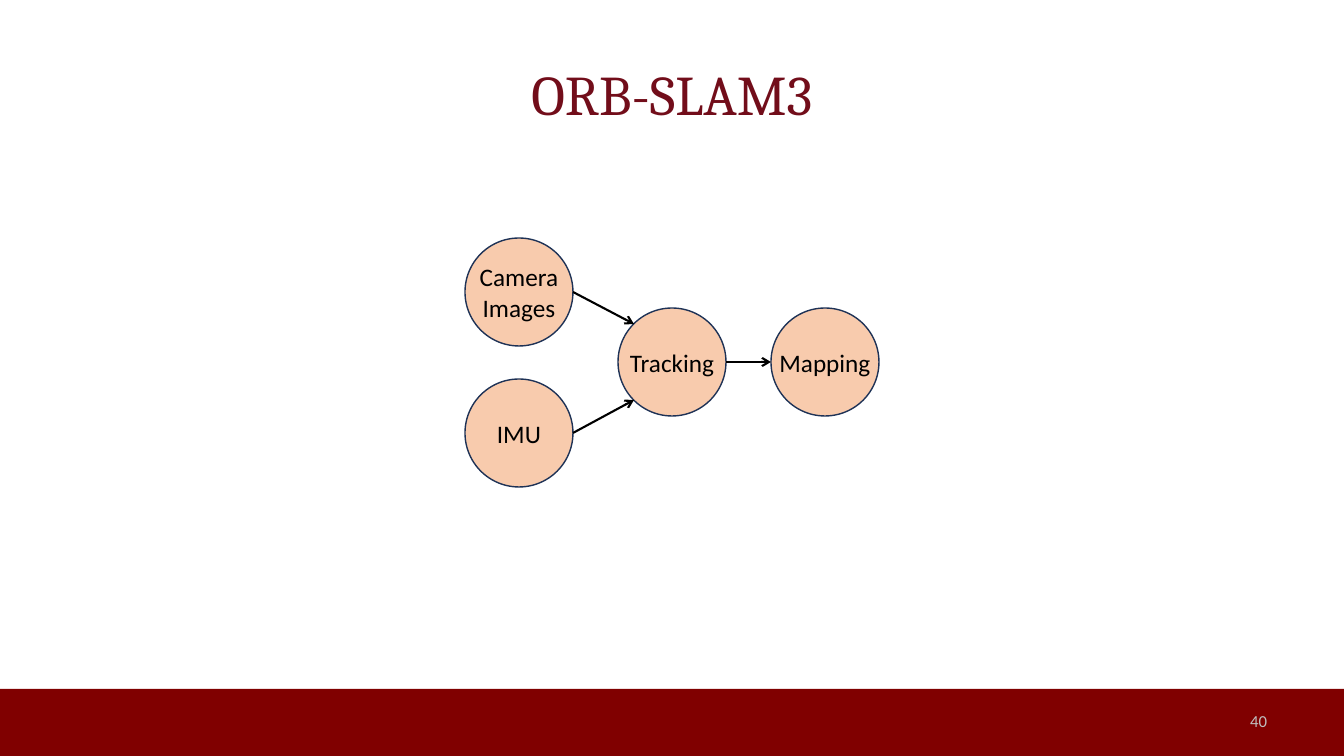
from math import cos, pi, sin

from lxml.etree import SubElement
from pptx import Presentation
from pptx.dml.color import RGBColor
from pptx.enum.shapes import MSO_CONNECTOR, MSO_SHAPE
from pptx.enum.text import MSO_ANCHOR, PP_ALIGN
from pptx.oxml.ns import qn
from pptx.util import Pt

EMU_PER_PX = 914400 / 100.8
MAROON = RGBColor(0x80, 0x00, 0x00)
WINE = RGBColor(0x72, 0x0D, 0x1A)
SILVER = RGBColor(0xBF, 0xBF, 0xBF)
PEACH = RGBColor(0xF8, 0xCB, 0xAD)
NAVY = RGBColor(0x1E, 0x32, 0x56)
BLACK = RGBColor(0x00, 0x00, 0x00)

TITLE = {"name": "Cambria", "size": Pt(40)}
PAGE = {"name": "Calibri", "size": Pt(12)}
NODE = {"name": "Calibri", "size": Pt(18)}
RADIUS = 54


def px(*lengths):
    return [round(length * EMU_PER_PX) for length in lengths]


class SlideBuilder:
    def __init__(self, width, height):
        self.deck = Presentation()
        self.deck.slide_width, self.deck.slide_height = px(width, height)
        self.slide = self.deck.slides.add_slide(self.deck.slide_layouts[6])

    def fill_frame(self, frame, lines, style, color, align):
        frame.vertical_anchor = MSO_ANCHOR.MIDDLE
        for index, line in enumerate(lines):
            paragraph = frame.add_paragraph() if index else frame.paragraphs[0]
            paragraph.alignment = align
            run = paragraph.add_run()
            run.text = line
            for key, value in style.items():
                setattr(run.font, key, value)
            run.font.color.rgb = color

    def label(self, box, line, style, color, align):
        frame = self.slide.shapes.add_textbox(*px(*box)).text_frame
        frame.word_wrap = True
        self.fill_frame(frame, [line], style, color, align)

    def shape(self, kind, box, fill, outline=None):
        shape = self.slide.shapes.add_shape(kind, *px(*box))
        shape.shadow.inherit = False
        shape.fill.solid()
        shape.fill.fore_color.rgb = fill
        if outline is None:
            shape.line.fill.background()
        else:
            shape.line.color.rgb = outline
            shape.line.width = Pt(1)
        return shape

    def node(self, center, lines):
        x, y = center
        box = (x - RADIUS, y - RADIUS, 2 * RADIUS, 2 * RADIUS)
        frame = self.shape(MSO_SHAPE.OVAL, box, PEACH, NAVY).text_frame
        for side in ("left", "top", "right", "bottom"):
            setattr(frame, f"margin_{side}", 0)
        frame.word_wrap = False
        self.fill_frame(frame, lines, NODE, BLACK, PP_ALIGN.CENTER)

    def arrow(self, start, end):
        connector = self.slide.shapes.add_connector(
            MSO_CONNECTOR.STRAIGHT, *px(*start, *end))
        connector.line.color.rgb = BLACK
        connector.line.width = Pt(1.5)
        properties = connector._element.spPr
        SubElement(properties.find(qn("a:ln")), qn("a:tailEnd"), type="arrow")
        SubElement(properties, qn("a:effectLst"))


def rim(center, degrees):
    angle = degrees * pi / 180
    return (round(center[0] + RADIUS * cos(angle)),
            round(center[1] + RADIUS * sin(angle)))


def main():
    builder = SlideBuilder(1344, 756)
    builder.shape(MSO_SHAPE.RECTANGLE, (0, 689, 1344, 67), MAROON)
    builder.label((67, 30, 1210, 126), "ORB-SLAM3", TITLE, WINE, PP_ALIGN.CENTER)
    builder.label((964, 701, 313, 40), "40", PAGE, SILVER, PP_ALIGN.RIGHT)

    camera, imu, tracking, mapping = (519, 292), (519, 433), (672, 362), (825, 362)
    stages = [(camera, ["Camera", "Images"]), (imu, ["IMU"]),
              (tracking, ["Tracking"]), (mapping, ["Mapping"])]
    for center, lines in stages:
        builder.node(center, lines)

    flows = [(imu, tracking, 135), (camera, tracking, 225), (tracking, mapping, 180)]
    for source, target, entry in flows:
        builder.arrow(rim(source, 0), rim(target, entry))

    builder.deck.save("out.pptx")


if __name__ == "__main__":
    main()
